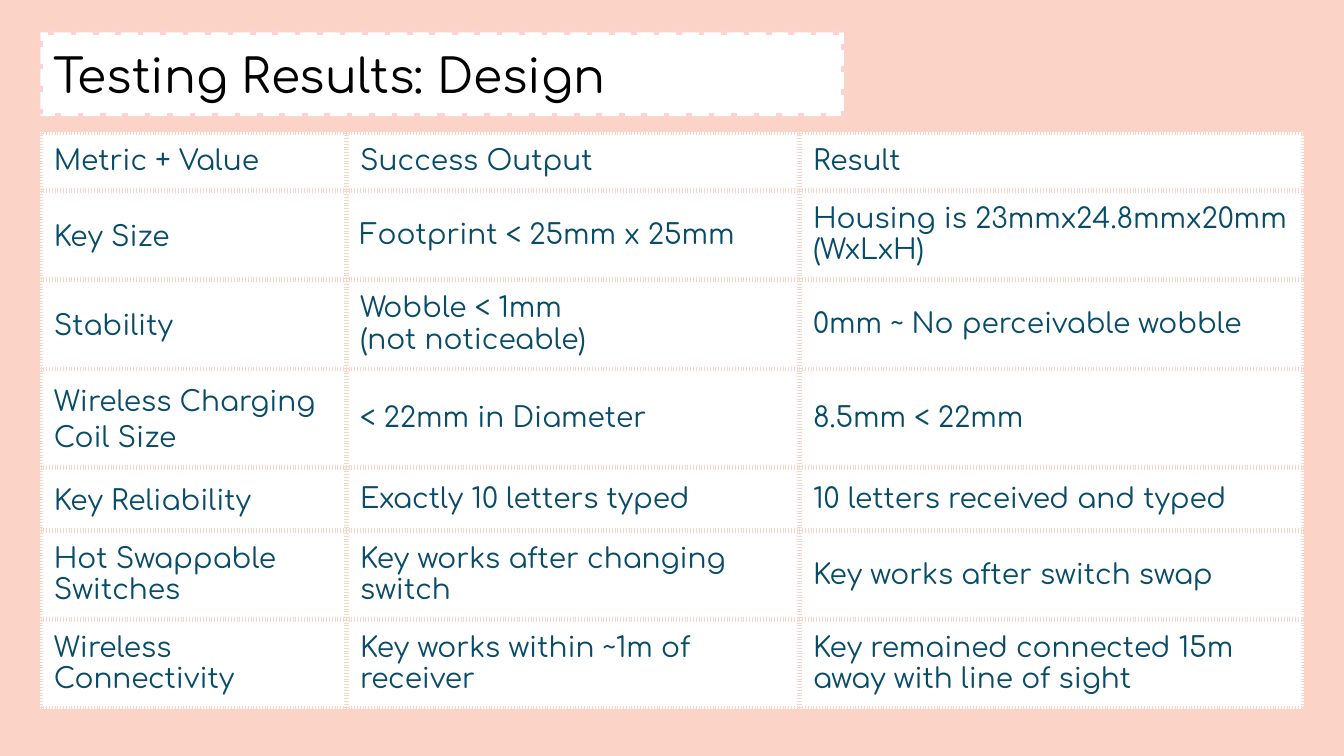
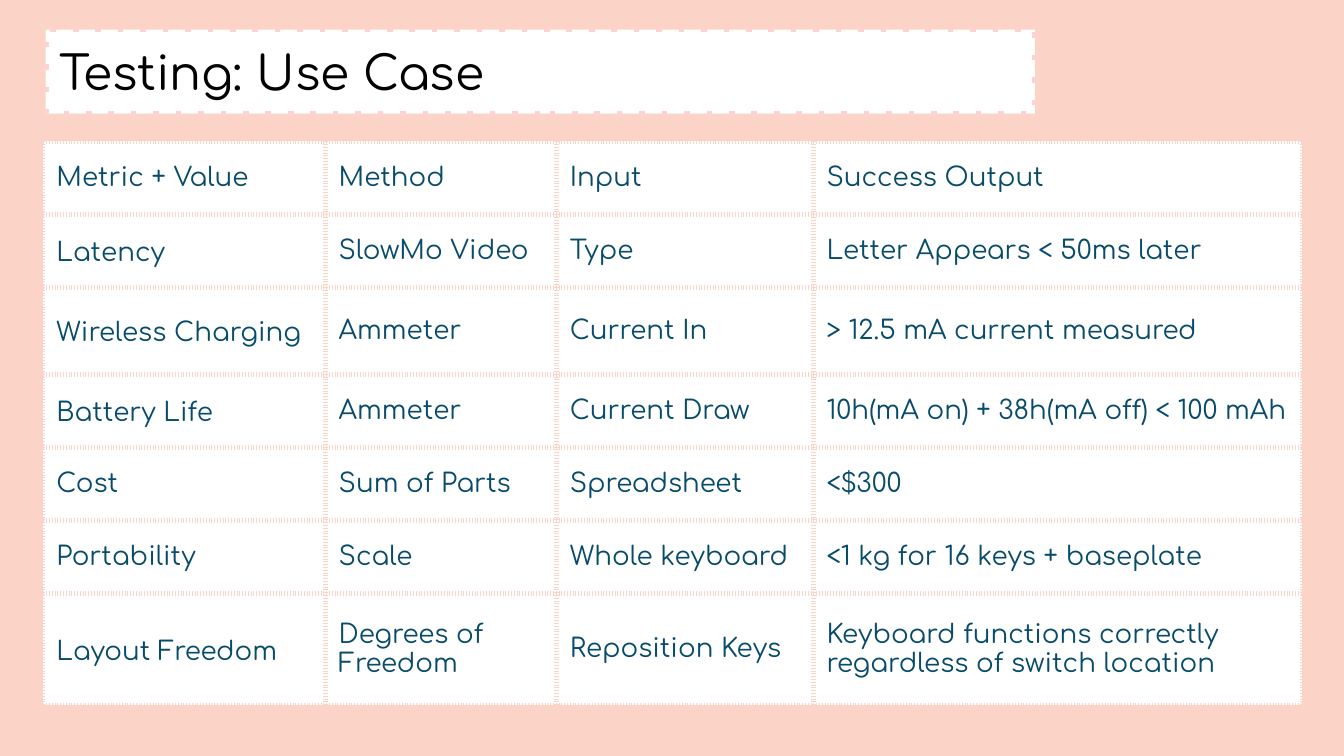
from lxml.etree import SubElement, fromstring
from pptx import Presentation
from pptx.dml.color import RGBColor
from pptx.enum.text import MSO_ANCHOR, MSO_AUTO_SIZE, PP_ALIGN
from pptx.oxml.ns import nsdecls, qn
from pptx.util import Inches, Pt

COLOURS = {
    "peach": "FBD3C7",
    "pink": "FFD2D2",
    "white": "FFFFFF",
    "black": "000000",
    "teal": "084C6A",
}
FONT = "Comfortaa"
TITLE_ONLY = 5
GRID_COLUMNS = 100  # square grid cells across the slide width


def colour(name):
    return RGBColor.from_string(COLOURS[name])


def dotted_line(tag, name, points=3):
    """Return a dotted line element, for an outline or a cell border."""
    line = fromstring(f'<a:{tag} {nsdecls("a")} w="{Pt(points)}"/>')
    fill = SubElement(line, qn("a:solidFill"))
    SubElement(fill, qn("a:srgbClr"), val=COLOURS[name])
    SubElement(line, qn("a:prstDash"), val="dot")
    return line


class Deck:
    def __init__(self):
        self.prs = Presentation()
        self.prs.slide_width = Inches(10)
        self.prs.slide_height = self.prs.slide_width * 9 // 16
        self.unit = self.prs.slide_width // GRID_COLUMNS
        backdrop = self.prs.slide_master.background.fill
        backdrop.solid()
        backdrop.fore_color.rgb = colour("peach")
        self.slide = None

    def grid(self, *cells):
        return [round(count * self.unit) for count in cells]

    def add_slide(self):
        layout = self.prs.slide_layouts[TITLE_ONLY]
        self.slide = self.prs.slides.add_slide(layout)

    def style(self, paragraph, size, name):
        font = paragraph.font
        font.name, font.size = FONT, Pt(size)
        font.color.rgb = colour(name)
        paragraph.alignment = PP_ALIGN.LEFT

    def title(self, text, left, top, width, height=6.25):
        title = self.slide.shapes.title
        title.left, title.top, title.width, title.height = self.grid(
            left, top, width, height)
        title.fill.solid()
        title.fill.fore_color.rgb = colour("white")
        title._element.spPr.append(dotted_line("ln", "pink"))
        frame = title.text_frame
        frame.text = text
        frame.word_wrap = True
        frame.auto_size = MSO_AUTO_SIZE.NONE
        frame.vertical_anchor = MSO_ANCHOR.MIDDLE
        frame.margin_left = frame.margin_right = Inches(0.1)
        frame.margin_top = frame.margin_bottom = Inches(0.1)
        self.style(frame.paragraphs[0], 25.2, "black")

    def table(self, rows, left, top, widths, heights, size, loose_metrics):
        """Draw the table; loose_metrics are first-column texts set with wider spacing."""
        table = self.slide.shapes.add_table(
            len(rows), len(widths),
            *self.grid(left, top, sum(widths), sum(heights))).table
        table.first_row = table.horz_banding = False
        for column, width in zip(table.columns, self.grid(*widths)):
            column.width = width
        for row, height in zip(table.rows, self.grid(*heights)):
            row.height = height
        for row, texts in zip(table.rows, rows):
            for cell, text in zip(row.cells, texts):
                self.cell(cell, text, size, text in loose_metrics)

    def cell(self, cell, text, size, loose):
        cell.vertical_anchor = MSO_ANCHOR.MIDDLE
        cell.margin_left = cell.margin_right = Inches(0.1)
        cell.margin_top = cell.margin_bottom = Inches(0.1)
        cell.fill.solid()
        cell.fill.fore_color.rgb = colour("white")
        properties = cell._tc.get_or_add_tcPr()
        for position, side in enumerate(("lnL", "lnR", "lnT", "lnB")):
            properties.insert(position, dotted_line(side, "peach"))
        paragraph = cell.text_frame.paragraphs[0]
        paragraph.text = text
        self.style(paragraph, size, "teal")
        if loose:
            paragraph.line_spacing = 1.15
            paragraph.space_after = Pt(12)


DESIGN_RESULTS = [
    ("Metric + Value", "Success Output", "Result"),
    ("Key Size", "Footprint < 25mm x 25mm", "Housing is 23mmx24.8mmx20mm (WxLxH)"),
    ("Stability", "Wobble < 1mm\n(not noticeable)", "0mm ~ No perceivable wobble"),
    ("Wireless Charging Coil Size", "< 22mm in Diameter", "8.5mm < 22mm"),
    ("Key Reliability", "Exactly 10 letters typed", "10 letters received and typed"),
    ("Hot Swappable Switches", "Key works after changing switch",
     "Key works after switch swap"),
    ("Wireless Connectivity", "Key works within ~1m of receiver",
     "Key remained connected 15m away with line of sight"),
]

USE_CASE_TESTS = [
    ("Metric + Value", "Method", "Input", "Success Output"),
    ("Latency", "SlowMo Video", "Type", "Letter Appears < 50ms later"),
    ("Wireless Charging", "Ammeter", "Current In", "> 12.5 mA current measured"),
    ("Battery Life", "Ammeter", "Current Draw", "10h(mA on) + 38h(mA off) < 100 mAh"),
    ("Cost", "Sum of Parts", "Spreadsheet", "<$300"),
    ("Portability", "Scale", "Whole keyboard", "<1 kg for 16 keys + baseplate"),
    ("Layout Freedom", "Degrees of Freedom", "Reposition Keys",
     "Keyboard functions correctly regardless of switch location"),
]


def main():
    deck = Deck()

    deck.add_slide()
    deck.title("Testing Results: Design", 3, 2.4, 59.8)
    deck.table(
        DESIGN_RESULTS, 3, 9.85,
        widths=(22.8, 33.7, 37.5),
        heights=(3.3, 5.1, 5.1, 5.4, 3.3, 5.1, 5.1),
        size=15,
        loose_metrics=("Key Size", "Stability", "Wireless Charging Coil Size",
                       "Key Reliability"))

    deck.add_slide()
    deck.title("Testing: Use Case", 3.4, 2.2, 73.6)
    deck.table(
        USE_CASE_TESTS, 3.2, 10.5,
        widths=(21, 17.2, 19.1, 36.4),
        heights=(5.43, 5.43, 6.5, 5.43, 5.43, 5.43, 8.35),
        size=14,
        loose_metrics=("Latency", "Wireless Charging", "Battery Life",
                       "Layout Freedom"))

    deck.prs.save("out.pptx")


if __name__ == "__main__":
    main()
